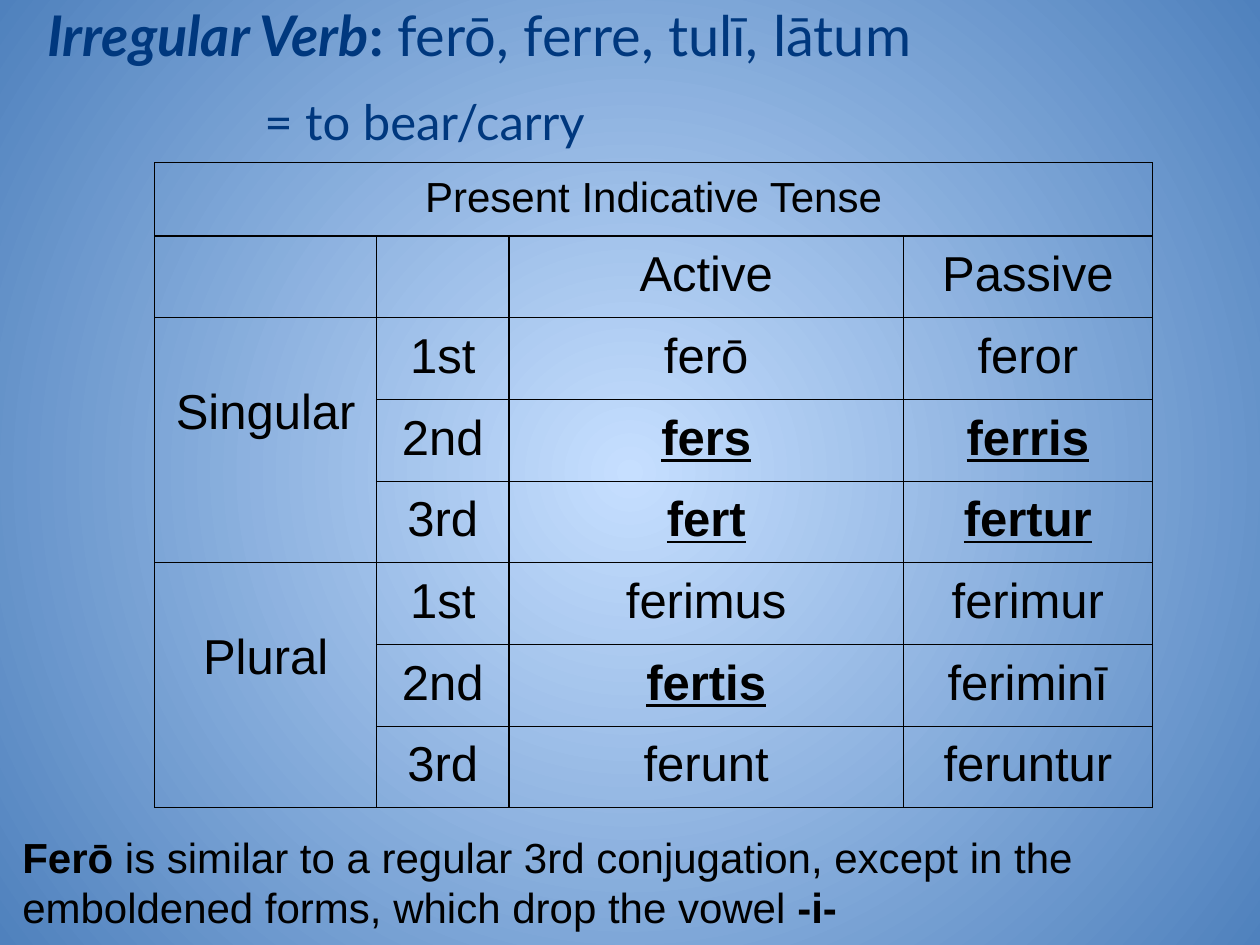
from lxml import etree
from pptx import Presentation
from pptx.dml.color import RGBColor
from pptx.enum import text
from pptx.oxml import ns
from pptx.util import Cm, Pt

COLORS = {"center": "C6DFFF", "edge": "4F81BD", "title": "00387E", "ink": "000000"}

# Content: text runs are (text, style), with b, i, u for bold, italic, underline
TITLE = [
    {"runs": [("Irregular Verb", "bi"), (": ", "b"), ("ferō, ferre, tulī, lātum", "")],
     "size": 32, "indent": 0.71, "before": 0},
    {"runs": [("= to bear/carry", "")], "size": 28, "indent": 5.08, "before": 13.3},
]
TENSE = "Present Indicative Tense"
VOICES = ["Active", "Passive"]
PERSONS = ["1st", "2nd", "3rd"]
FORMS = {
    "Singular": [("ferō", "feror"), ("fers", "ferris"), ("fert", "fertur")],
    "Plural": [("ferimus", "ferimur"), ("fertis", "feriminī"), ("ferunt", "feruntur")],
}
IRREGULAR = {"fers", "ferris", "fert", "fertur", "fertis"}
NOTE = [("Ferō", "b"),
        (" is similar to a regular 3rd conjugation, except in the emboldened forms, "
         "which drop the vowel ", ""),
        ("-i-", "b")]

COLS = [4.47, 2.67, 7.95, 5.02]
HEAD_H, ROW_H = 1.45, 1.61
INSET, CELL_INSET, LINE_H = 0.25, 0.23, 1.14


def add_runs(p, runs, font, size, color):
    p.font.name, p.font.size = font, Pt(size)
    p.font.color.rgb = RGBColor.from_string(COLORS[color])
    for words, style in runs:
        r = p.add_run()
        r.text = words
        for flag, name in (("b", "bold"), ("i", "italic"), ("u", "underline")):
            if flag in style:
                setattr(r.font, name, True)


def add_text(s, box, anchor):
    tf = s.shapes.add_textbox(*map(Cm, box)).text_frame
    tf.word_wrap, tf.vertical_anchor = True, anchor
    tf.margin_left = tf.margin_right = tf.margin_top = tf.margin_bottom = Cm(INSET)
    return tf


def style_cell(cell):
    cell.fill.background()
    cell.margin_left = cell.margin_right = Cm(INSET)
    cell.margin_top = cell.margin_bottom = Cm(CELL_INSET)
    tc_pr = cell._tc.get_or_add_tcPr()
    for n, side in enumerate(("lnL", "lnR", "lnT", "lnB")):
        ln = etree.Element(ns.qn(f"a:{side}"), w=str(Pt(0.75)))
        fill = etree.SubElement(ln, ns.qn("a:solidFill"))
        etree.SubElement(fill, ns.qn("a:srgbClr"), val=COLORS["ink"])
        tc_pr.insert(n, ln)


def fill_cell(cell, words, size=28):
    p = cell.text_frame.paragraphs[0]
    p.alignment = text.PP_ALIGN.CENTER
    add_runs(p, [(words, "bu" if words in IRREGULAR else "")], "Arial", size, "ink")


prs = Presentation()
prs.slide_width, prs.slide_height = Cm(25.4), Cm(19.05)
s = prs.slides.add_slide(prs.slide_layouts[6])

# Radial background
bg = s.background.fill
bg.gradient()
for stop, name in zip(bg.gradient_stops, ("center", "edge")):
    stop.color.rgb = RGBColor.from_string(COLORS[name])
grad = next(s.element.iter(ns.qn("a:gradFill")))
grad.remove(grad.find(ns.qn("a:lin")))
circle = etree.SubElement(grad, ns.qn("a:path"), path="circle")
etree.SubElement(circle, ns.qn("a:fillToRect"), dict.fromkeys("ltrb", "50000"))

# Title
tf = add_text(s, (0, -2.49, 25.4, 5.77), text.MSO_ANCHOR.BOTTOM)
for n, line in enumerate(TITLE):
    p = tf.add_paragraph() if n else tf.paragraphs[0]
    p.space_before = Pt(line["before"])
    p._p.get_or_add_pPr().set("indent", str(Cm(line["indent"])))
    add_runs(p, line["runs"], "Lato", line["size"], "title")

# Conjugation table
heights = [HEAD_H] + [ROW_H] * (1 + len(FORMS) * len(PERSONS))
tbl = s.shapes.add_table(len(heights), len(COLS), Cm(3.12), Cm(3.28),
                         Cm(sum(COLS)), Cm(sum(heights))).table
tbl.first_row = tbl.horz_banding = False
for col, w in zip(tbl.columns, COLS):
    col.width = Cm(w)
for row, h in zip(tbl.rows, heights):
    row.height = Cm(h)
for cell in tbl.iter_cells():
    style_cell(cell)

tbl.cell(0, 0).merge(tbl.cell(0, len(COLS) - 1))
fill_cell(tbl.cell(0, 0), TENSE, 24)
for c, voice in enumerate(VOICES, 2):
    fill_cell(tbl.cell(1, c), voice)
for g, (number, forms) in enumerate(FORMS.items()):
    top = 2 + g * len(PERSONS)
    label = tbl.cell(top, 0)
    label.merge(tbl.cell(top + len(PERSONS) - 1, 0))
    label.margin_top = Cm(CELL_INSET + LINE_H)  # label sits one line down
    fill_cell(label, number)
    for r, (person, pair) in enumerate(zip(PERSONS, forms), top):
        for c, words in enumerate((person, *pair), 1):
            fill_cell(tbl.cell(r, c), words)

# Note
tf = add_text(s, (0.2, 16.51, 25.2, 1.93), text.MSO_ANCHOR.TOP)
add_runs(tf.paragraphs[0], NOTE, "Arial", 24, "ink")

prs.save("out.pptx")
